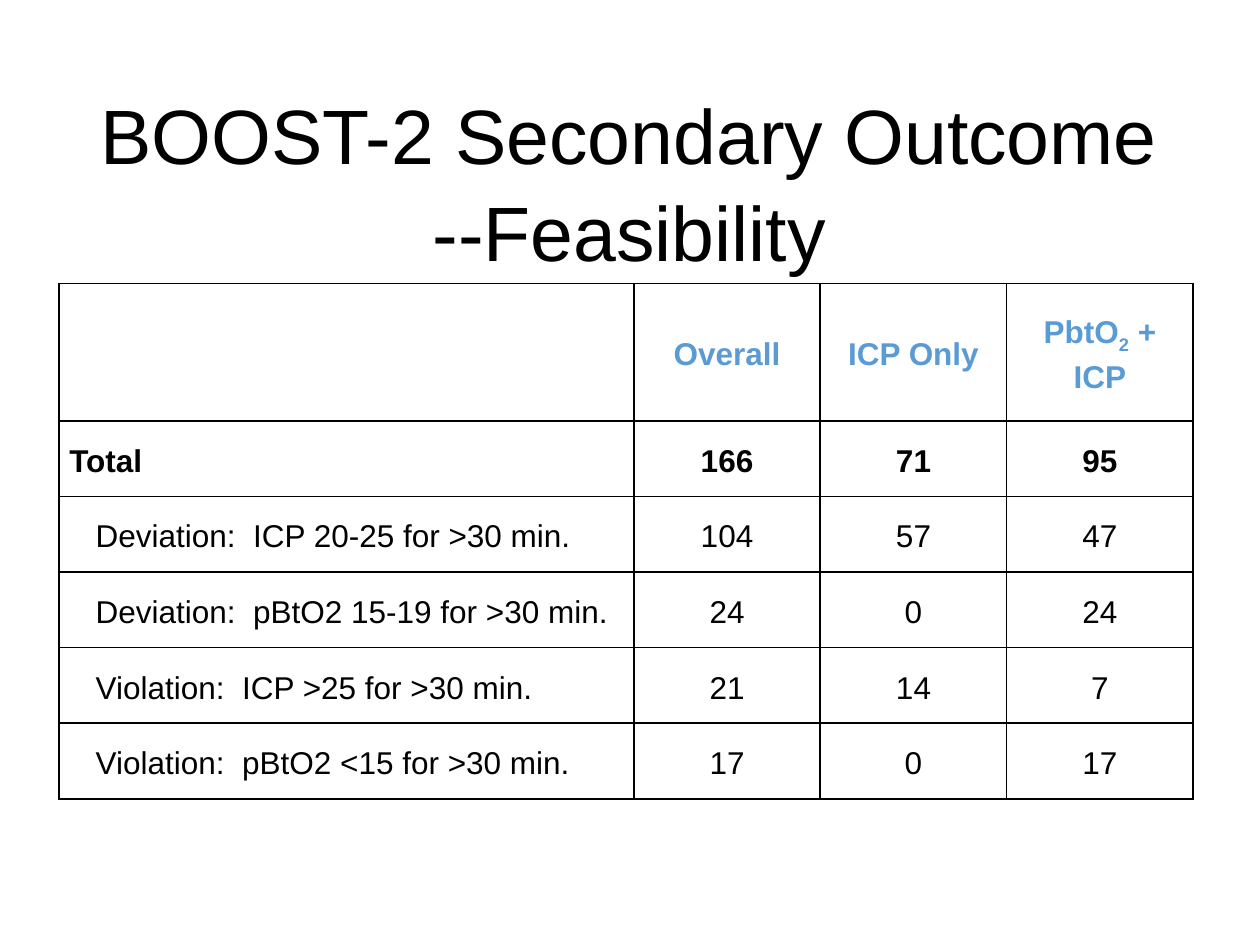
from lxml import etree
from pptx import Presentation
from pptx import util as u
from pptx.dml.color import RGBColor
from pptx.enum import text
from pptx.oxml.ns import qn

PX = 9144  # 100 px to the inch
COLORS = {"ink": "000000", "accent": "5B9BD5"}
SUBSCRIPT = "-25000"

HEADINGS = [[""], ["Overall"], ["ICP Only"], ["PbtO", "2", " + ICP"]]
TOTAL = ["Total", 166, 71, 95]
EVENTS = [
    ["Deviation:  ICP 20-25 for >30 min.", 104, 57, 47],
    ["Deviation:  pBtO2 15-19 for >30 min.", 24, 0, 24],
    ["Violation:  ICP >25 for >30 min.", 21, 14, 7],
    ["Violation:  pBtO2 <15 for >30 min.", 17, 0, 17],
]


class SlideBuilder:
    font = "Arial"
    title_size = 44
    table_size = 18
    cell_margin = 8
    indent = 29

    def __init__(self, slide):
        self.slide = slide

    def style(self, paragraph, size, color="ink", bold=False, centered=True):
        paragraph.alignment = text.PP_ALIGN.CENTER if centered else text.PP_ALIGN.LEFT
        for run in paragraph.runs:
            run.font.name = self.font
            run.font.size = u.Pt(size)
            run.font.bold = bold
            run.font.color.rgb = RGBColor.from_string(COLORS[color])

    def title(self, lines, left, top, width, height):
        shape = self.slide.shapes.title
        shape.left, shape.top, shape.width, shape.height = (
            v * PX for v in (left, top, width, height))
        frame = shape.text_frame
        frame.text = "\n".join(lines)
        frame.word_wrap = True
        frame.auto_size = text.MSO_AUTO_SIZE.NONE
        frame.vertical_anchor = text.MSO_ANCHOR.TOP
        frame.margin_top = 8 * PX
        for paragraph in frame.paragraphs:
            paragraph.line_spacing = 1.05
            self.style(paragraph, self.title_size)

    def table(self, left, top, columns, rows):
        frame = self.slide.shapes.add_table(
            len(rows), len(columns), left * PX, top * PX,
            sum(columns) * PX, sum(rows) * PX)
        table = frame.table
        table.first_row = table.horz_banding = False
        for column, width in zip(table.columns, columns):
            column.width = width * PX
        for row, height in zip(table.rows, rows):
            row.height = height * PX
        return table

    def cell(self, cell, parts, indented=False, **style):
        cell.vertical_anchor = text.MSO_ANCHOR.MIDDLE
        cell.margin_left = (self.indent if indented else self.cell_margin) * PX
        cell.margin_right = self.cell_margin * PX
        cell.margin_top = cell.margin_bottom = 2 * PX
        self.borders(cell)
        cell.fill.background()
        paragraph = cell.text_frame.paragraphs[0]
        paragraph.line_spacing = 1.15
        for part in filter(None, parts):
            paragraph.add_run().text = part
        self.style(paragraph, self.table_size, **style)

    def borders(self, cell):
        properties = cell._tc.get_or_add_tcPr()
        for side in ("a:lnL", "a:lnR", "a:lnT", "a:lnB"):
            line = etree.SubElement(properties, qn(side), w=str(u.Pt(1)))
            fill = etree.SubElement(line, qn("a:solidFill"))
            etree.SubElement(fill, qn("a:srgbClr"), val=COLORS["ink"])


def main():
    presentation = Presentation()
    presentation.slide_width, presentation.slide_height = 1000 * PX, 750 * PX
    slide = presentation.slides.add_slide(presentation.slide_layouts[5])
    builder = SlideBuilder(slide)

    # Table grid and heading row
    table = builder.table(47, 225, [456] + [148] * 3, [109] + [60] * 5)
    for column, parts in enumerate(HEADINGS):
        builder.cell(table.cell(0, column), parts, color="accent", bold=True)
    subscript = table.cell(0, 3).text_frame.paragraphs[0].runs[1]
    subscript.font._element.set("baseline", SUBSCRIPT)

    # Total row, then one indented row per kind of event
    for row, values in enumerate([TOTAL] + EVENTS, start=1):
        is_total = row == 1
        for column, value in enumerate(values):
            is_label = column == 0
            builder.cell(table.cell(row, column), [str(value)],
                         indented=is_label and not is_total,
                         bold=is_total, centered=not is_label)

    # Title
    builder.title(["BOOST-2 Secondary Outcome", "--Feasibility"], 58, 58, 883, 125)

    presentation.save("out.pptx")


if __name__ == "__main__":
    main()
